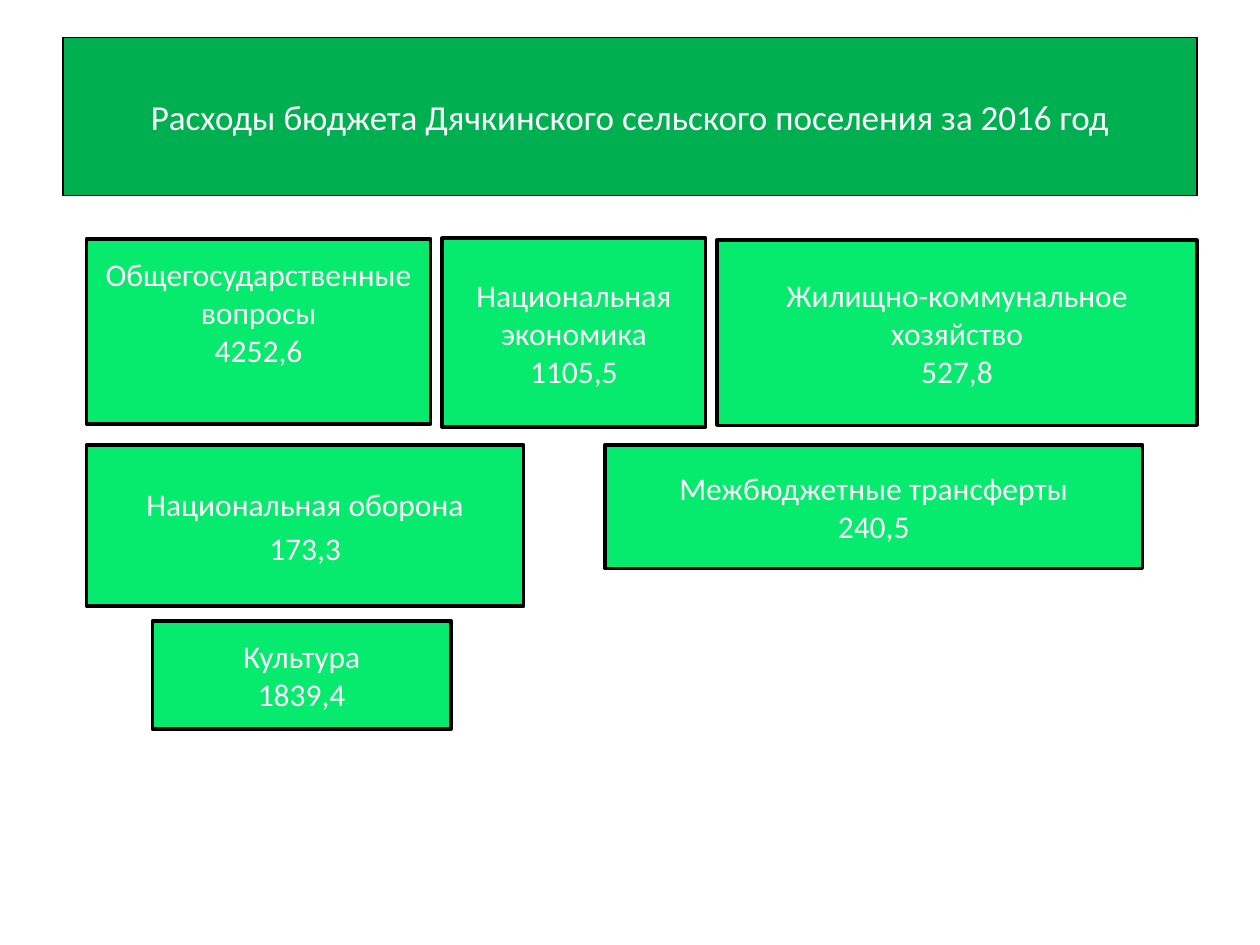
from dataclasses import dataclass

from pptx import Presentation
from pptx.dml.color import RGBColor
from pptx.enum.shapes import MSO_SHAPE
from pptx.enum.text import MSO_ANCHOR, PP_ALIGN
from pptx.util import Pt

RECTANGLE = MSO_SHAPE.RECTANGLE
MIDDLE = MSO_ANCHOR.MIDDLE
CENTER = PP_ALIGN.CENTER


@dataclass(frozen=True)
class Theme:
    font: str = "Calibri"
    title_fill: RGBColor = RGBColor(0x00, 0xB0, 0x50)
    box_fill: RGBColor = RGBColor(0x06, 0xEA, 0x6D)
    line: RGBColor = RGBColor(0x00, 0x00, 0x00)
    text: RGBColor = RGBColor(0xFF, 0xFF, 0xFF)
    title_size: int = 20
    box_size: int = 18


theme = Theme()


def format_box(shape, text, fill, line_width, size, space_before=0):
    shape.fill.solid()
    shape.fill.fore_color.rgb = fill
    shape.line.color.rgb = theme.line
    shape.line.width = Pt(line_width)
    text_frame = shape.text_frame
    text_frame.text = text
    text_frame.word_wrap = True
    text_frame.vertical_anchor = MIDDLE
    for paragraph in text_frame.paragraphs:
        paragraph.alignment = CENTER
        paragraph.space_before = Pt(space_before)
        for run in paragraph.runs:
            run.font.name = theme.font
            run.font.size = Pt(size)
            run.font.color.rgb = theme.text


presentation = Presentation()
presentation.slide_width = Pt(720)
presentation.slide_height = Pt(540)
slide = presentation.slides.add_slide(presentation.slide_layouts[5])

title = slide.shapes.title
title.left, title.top, title.width, title.height = Pt(36), Pt(21.6), Pt(648), Pt(90)
format_box(title, "Расходы бюджета Дячкинского сельского поселения за 2016 год",
           theme.title_fill, 0.75, theme.title_size)

expenses = [
    ("Общегосударственные вопросы", "4252,6", 49.5, 136.5, 196.6, 105.8, 0, 25.5),
    ("Национальная экономика", "1105,5", 252.7, 136.1, 150.5, 108, 0, 3.6),
    ("Жилищно-коммунальное хозяйство", "527,8", 409.7, 137.3, 274.3, 105.8, 0, 3.6),
    ("Культура", "1839,4", 87.1, 354.8, 170.6, 61.9, 0, 3.6),
    ("Межбюджетные трансферты", "240,5", 345.6, 254.2, 307.4, 70.6, 0, 3.6),
    ("Национальная оборона", "173,3", 49.5, 254.2, 249.8, 92.2, 3.6, 3.6),
]
for name, amount, left, top, width, height, space_before, bottom_inset in expenses:
    box = slide.shapes.add_shape(RECTANGLE, Pt(left), Pt(top), Pt(width), Pt(height))
    box.shadow.inherit = False
    format_box(box, f"{name}\n{amount}", theme.box_fill, 2, theme.box_size, space_before)
    box.text_frame.margin_bottom = Pt(bottom_inset)

presentation.save("out.pptx")
